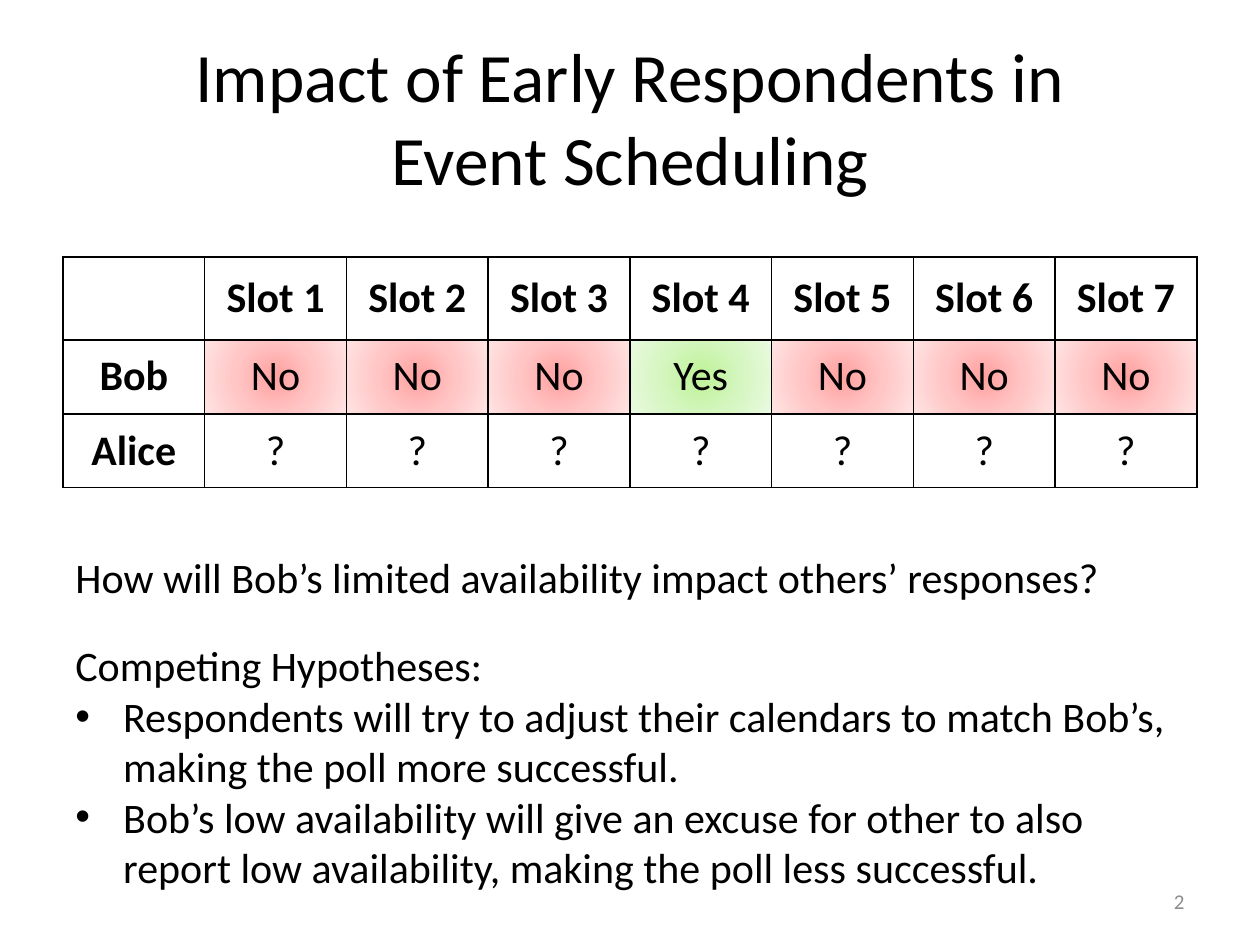
from pptx import Presentation
from pptx.dml.color import RGBColor
from pptx.enum.text import MSO_ANCHOR, PP_ALIGN
from pptx.oxml import parse_xml
from pptx.oxml.ns import nsdecls
from pptx.util import Inches, Pt

prs = Presentation()
prs.slide_width, prs.slide_height = Inches(10), Inches(7.5)
slide = prs.slides.add_slide(prs.slide_layouts[6])

# Page grid
margin = Inches(0.5)
content_width = prs.slide_width - 2 * margin
slot_count = 7
column_width = content_width // (slot_count + 1)

# Gradient stops from the centre of a cell to its edge
answer_stops = {
    "No": ["FFA1A0", "FFC6C5", "FFE3E3"],
    "Yes": ["BEF297", "D5F6C0", "EAFAE0"],
}


def style(paragraph, size, align=PP_ALIGN.LEFT, color="000000", bold=False):
    paragraph.alignment = align
    paragraph.font.name = "Calibri"
    paragraph.font.size = Pt(size)
    paragraph.font.bold = bold
    paragraph.font.color.rgb = RGBColor.from_string(color)


def add_text(left, top, width, height, lines, size, align=PP_ALIGN.LEFT,
             color="000000", anchor=MSO_ANCHOR.TOP):
    frame = slide.shapes.add_textbox(left, top, width, height).text_frame
    frame.word_wrap = True
    frame.vertical_anchor = anchor
    for index, line in enumerate(lines):
        paragraph = frame.add_paragraph() if index else frame.paragraphs[0]
        paragraph.text = line.removeprefix("• ")
        if line.startswith("• "):
            properties = paragraph._p.get_or_add_pPr()
            properties.set("marL", str(Inches(0.38)))
            properties.set("indent", str(-Inches(0.38)))
            properties.append(parse_xml(f'<a:buFont {nsdecls("a")} typeface="Arial"/>'))
            properties.append(parse_xml(f'<a:buChar {nsdecls("a")} char="•"/>'))
        style(paragraph, size, align, color)


# Title
add_text(margin, Inches(0.3), content_width, Inches(1.25),
         ["Impact of Early Respondents in\vEvent Scheduling"], 39.6,
         PP_ALIGN.CENTER, anchor=MSO_ANCHOR.MIDDLE)

# Slide number
add_text(Inches(7.17), Inches(6.95), Inches(2.33), Inches(0.4), ["2"], 12,
         PP_ALIGN.RIGHT, "8C8C8C", MSO_ANCHOR.MIDDLE)

# Poll: Bob's answers under the slots, then Alice's open row
slots = [""] + [f"Slot {number}" for number in range(1, slot_count + 1)]
bob = ["Bob", "No", "No", "No", "Yes", "No", "No", "No"]
alice = ["Alice"] + ["?"] * slot_count
polls = [(2.04, [0.66, 0.58], [slots, bob]), (3.29, [0.58], [alice])]

for top, row_heights, rows in polls:
    poll = slide.shapes.add_table(len(rows), len(slots), margin, Inches(top),
                                  content_width, Inches(sum(row_heights))).table
    poll.first_row = poll.horz_banding = False
    for column in poll.columns:
        column.width = column_width
    for row_index, answers in enumerate(rows):
        poll.rows[row_index].height = Inches(row_heights[row_index])
        for column_index, answer in enumerate(answers):
            cell = poll.cell(row_index, column_index)
            cell.text = answer
            cell.vertical_anchor = MSO_ANCHOR.MIDDLE
            is_heading = column_index == 0 or answers is slots
            style(cell.text_frame.paragraphs[0], 24, PP_ALIGN.CENTER, bold=is_heading)

            # Borders come before the fill
            cell_properties = cell._tc.get_or_add_tcPr()
            for side in "LRTB":
                cell_properties.append(parse_xml(
                    f'<a:ln{side} {nsdecls("a")} w="{Pt(1)}"><a:solidFill>'
                    f'<a:srgbClr val="000000"/></a:solidFill></a:ln{side}>'))
            if answer in answer_stops:
                stops = "".join(
                    f'<a:gs pos="{index * 50000}"><a:srgbClr val="{color}"/></a:gs>'
                    for index, color in enumerate(answer_stops[answer]))
                cell_properties.append(parse_xml(
                    f'<a:gradFill {nsdecls("a")}><a:gsLst>{stops}</a:gsLst>'
                    '<a:path path="circle"><a:fillToRect l="50000" t="50000" '
                    'r="50000" b="50000"/></a:path></a:gradFill>'))
            else:
                cell.fill.background()

# Question
add_text(margin, Inches(4.33), Inches(8.85), Inches(0.5),
         ["How will Bob’s limited availability impact others’ responses?"], 24)

# Hypotheses
add_text(margin, Inches(5.03), content_width, Inches(2.12), [
    "Competing Hypotheses:",
    "• Respondents will try to adjust their calendars to match Bob’s, "
    "making the poll more successful.",
    "• Bob’s low availability will give an excuse for other to also "
    "report low availability, making the poll less successful.",
], 24)

prs.save("out.pptx")
